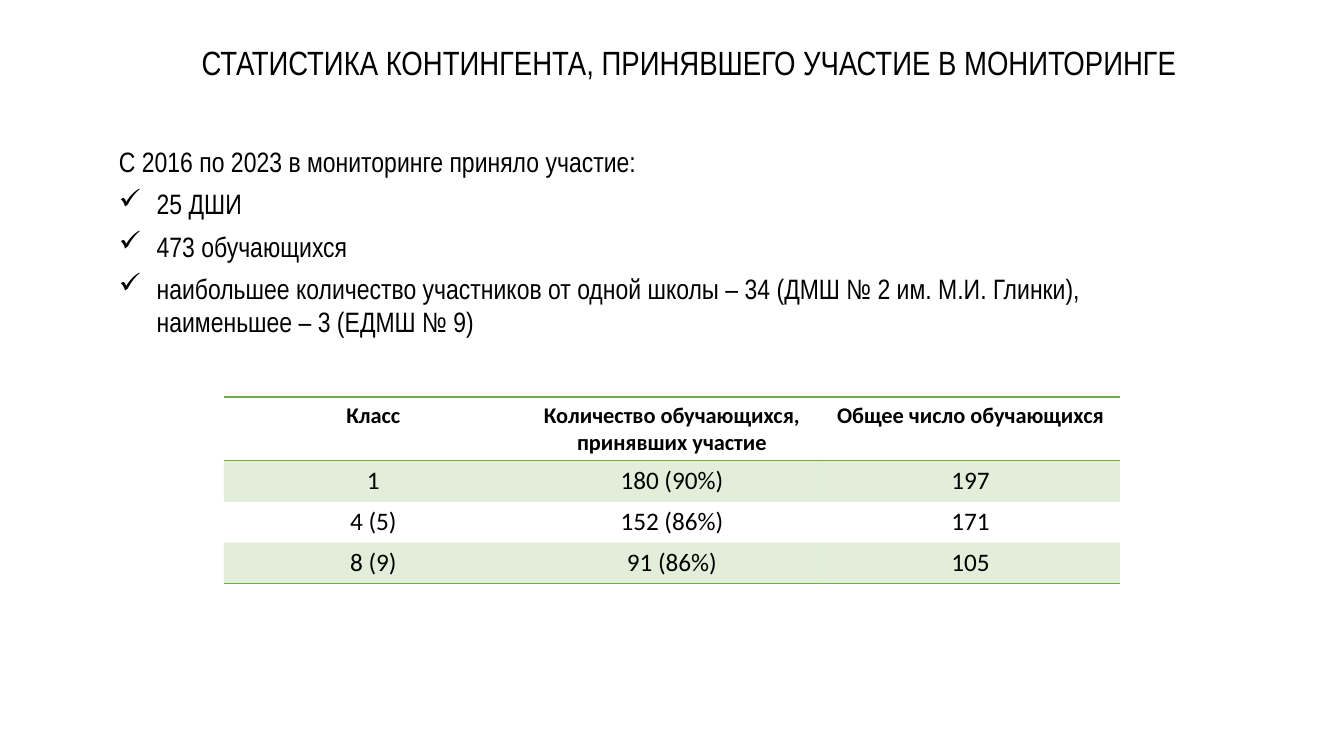
from dataclasses import dataclass

from lxml import etree
from pptx import Presentation
from pptx.dml.color import RGBColor
from pptx.enum.text import MSO_ANCHOR, PP_ALIGN
from pptx.oxml.ns import qn
from pptx.util import Pt

LEFT, CENTER = PP_ALIGN.LEFT, PP_ALIGN.CENTER
TOP, MIDDLE = MSO_ANCHOR.TOP, MSO_ANCHOR.MIDDLE
COLORS = {"ink": "000000", "paper": "FFFFFF", "green": "70AD47"}
NARROW, SANS = "Arial Narrow", "Calibri"
INDENT = 27


@dataclass
class Line:
    text: str
    mark: str = ""


@dataclass
class Box:
    left: float
    top: float
    width: float
    height: float
    size: float
    lines: list[Line]
    align: PP_ALIGN = LEFT
    space: float = 0
    fill: str = ""


@dataclass
class Row:
    cells: list[str]
    height: float = 29.2
    size: float = 18
    bold: bool = False
    anchor: MSO_ANCHOR = MIDDLE
    tint: bool = False
    above: bool = False
    below: bool = False


TITLE = Box(131.8, 26.6, 720.7, 36, 24, [
    Line("СТАТИСТИКА КОНТИНГЕНТА, ПРИНЯВШЕГО УЧАСТИЕ В МОНИТОРИНГЕ"),
], align=CENTER)

FACTS = Box(77.8, 100, 714.2, 147, 20, [
    Line("С 2016 по 2023 в мониторинге приняло участие:"),
    Line("25 ДШИ", "✓"),
    Line("473 обучающихся", "✓"),
    Line("наибольшее количество участников от одной школы – 34 "
         "(ДМШ № 2 им. М.И. Глинки), \nнаименьшее – 3 (ЕДМШ № 9)", "✓"),
], space=6, fill="paper")

ROWS = [
    Row(["Класс", "Количество обучающихся, принявших участие",
         "Общее число обучающихся"], height=45.6, size=16, bold=True,
        anchor=TOP, above=True, below=True),
    Row(["1", "180 (90%)", "197"], tint=True, above=True),
    Row(["4 (5)", "152 (86%)", "171"]),
    Row(["8 (9)", "91 (86%)", "105"], tint=True, below=True),
]


def color(name: str) -> RGBColor:
    return RGBColor.from_string(COLORS[name])


def style(para, face: str, size: float, align: PP_ALIGN, bold: bool = False) -> None:
    para.alignment = align
    font = para.font
    font.name, font.size, font.bold = face, Pt(size), bold
    font.color.rgb = color("ink")


def bullet(para, mark: str) -> None:
    props = para._p.get_or_add_pPr()
    props.set("marL", str(Pt(INDENT)))
    props.set("indent", str(-Pt(INDENT)))
    char = etree.Element(qn("a:buChar"), char=mark)
    props.find(qn("a:defRPr")).addprevious(char)


def draw_box(slide, box: Box) -> None:
    shape = slide.shapes.add_textbox(
        Pt(box.left), Pt(box.top), Pt(box.width), Pt(box.height))
    if box.fill:
        shape.fill.solid()
        shape.fill.fore_color.rgb = color(box.fill)
    frame = shape.text_frame
    frame.word_wrap = True
    for index, line in enumerate(box.lines):
        para = frame.add_paragraph() if index else frame.paragraphs[0]
        para.text = line.text
        para.space_before = Pt(box.space)
        style(para, NARROW, box.size, box.align)
        if line.mark:
            bullet(para, line.mark)


def border(cell, side: str, shown: bool) -> None:
    edge = etree.SubElement(cell._tc.get_or_add_tcPr(), qn(f"a:ln{side}"),
                            w=str(Pt(1)))
    if shown:
        fill = etree.SubElement(edge, qn("a:solidFill"))
        etree.SubElement(fill, qn("a:srgbClr"), val=COLORS["green"])
    else:
        etree.SubElement(edge, qn("a:noFill"))


def paint(cell, tint: bool) -> None:
    if not tint:
        cell.fill.background()
        return
    cell.fill.solid()
    cell.fill.fore_color.rgb = color("green")
    tone = cell._tc.tcPr.find(qn("a:solidFill")).find(qn("a:srgbClr"))
    etree.SubElement(tone, qn("a:alpha"), val="20000")


def draw_table(slide, rows: list[Row], left: float, top: float, width: float) -> None:
    count = len(rows[0].cells)
    table = slide.shapes.add_table(
        len(rows), count, Pt(left), Pt(top), Pt(width),
        Pt(sum(row.height for row in rows))).table
    table.first_row = table.horz_banding = False
    for line, row in zip(table.rows, rows):
        line.height = Pt(row.height)
        for cell, text in zip(line.cells, row.cells):
            cell.text = text
            cell.vertical_anchor = row.anchor
            style(cell.text_frame.paragraphs[0], SANS, row.size, CENTER, row.bold)
            for side, shown in zip("LRTB", (False, False, row.above, row.below)):
                border(cell, side, shown)
            paint(cell, row.tint)


def main() -> None:
    deck = Presentation()
    deck.slide_width, deck.slide_height = Pt(960), Pt(540)
    slide = deck.slides.add_slide(deck.slide_layouts[6])
    draw_box(slide, FACTS)
    draw_box(slide, TITLE)
    draw_table(slide, ROWS, 160, 283.6, 640)
    deck.save("out.pptx")


if __name__ == "__main__":
    main()
